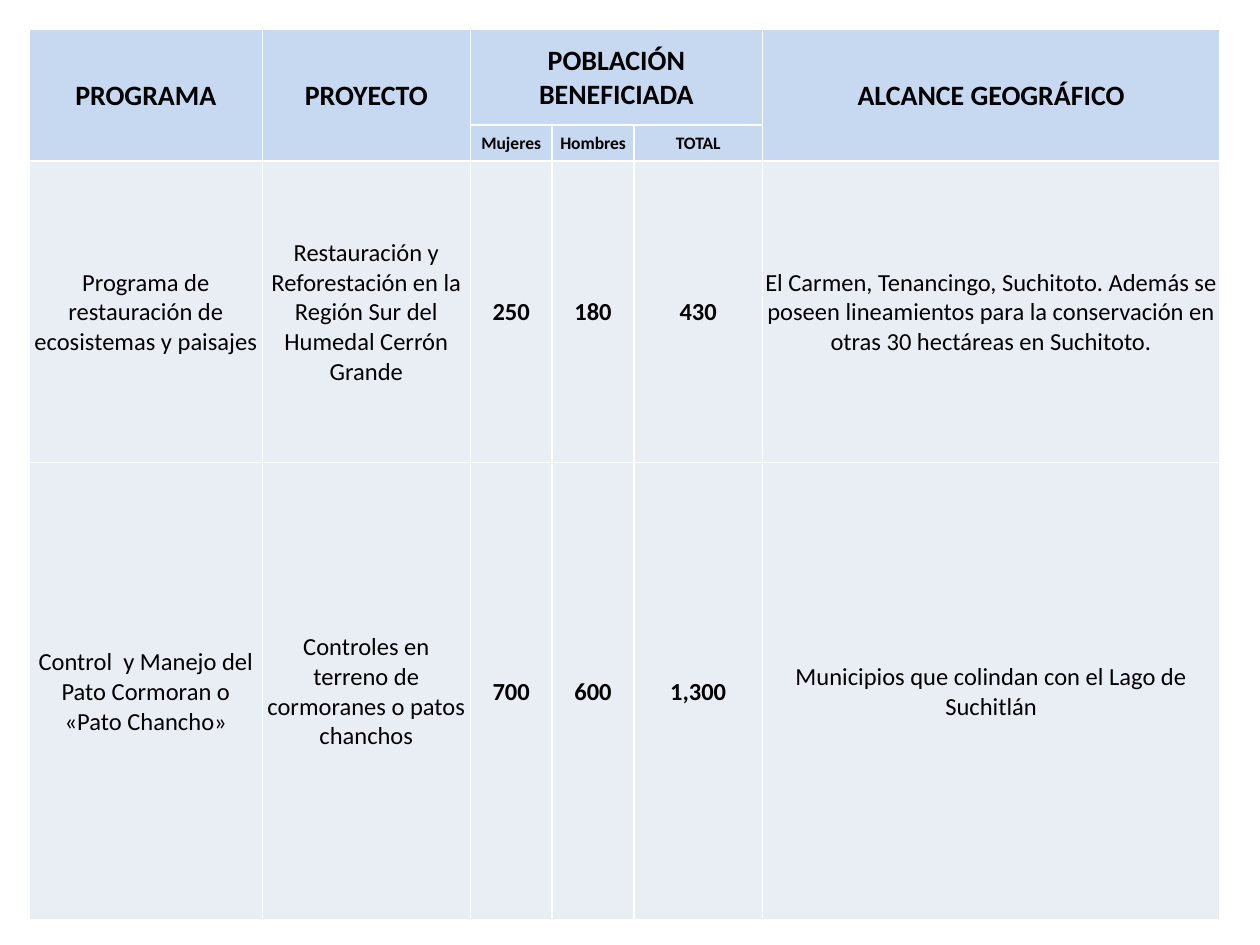
from dataclasses import dataclass
from pptx import Presentation as Deck
from pptx.dml.color import RGBColor as Color
from pptx.enum.text import MSO_ANCHOR as Anchor, PP_ALIGN as Align
from pptx.oxml import parse_xml as to_xml
from pptx.oxml.ns import nsdecls
from pptx.util import Cm, Pt


@dataclass(frozen=True)
class Theme:
    font: str = "Calibri"
    ink: str = "000000"
    head: str = "C6D9F1"
    body: str = "E9EDF4"
    rule: str = "FFFFFF"
    line: int = 12700
    big: int = 16
    small: int = 10
    text: int = 14


def apply(item, form):
    for name, value in form.items():
        setattr(item, name, value)


class Page:
    def __init__(self, deck, theme):
        self.theme = theme
        self.slide = deck.slides.add_slide(deck.slide_layouts[6])

    def border(self, cell):
        props = cell._tc.get_or_add_tcPr()
        for side in "LRTB":
            props.append(to_xml(
                f'<a:ln{side} {nsdecls("a")} w="{self.theme.line}"><a:solidFill>'
                f'<a:srgbClr val="{self.theme.rule}"/></a:solidFill></a:ln{side}>'))

    def cell(self, cell, text, size, bold, fill):
        side = Cm(0.03)
        apply(cell, {"margin_left": side, "margin_right": side, "margin_top": side,
                     "margin_bottom": 0, "vertical_anchor": Anchor.MIDDLE})
        self.border(cell)
        cell.fill.solid()
        cell.fill.fore_color.rgb = Color.from_string(fill)
        para = cell.text_frame.paragraphs[0]
        para.alignment = Align.CENTER
        run = para.add_run()
        run.text = text
        apply(run.font, {"name": self.theme.font, "size": Pt(size), "bold": bold})
        run.font.color.rgb = Color.from_string(self.theme.ink)

    def table(self, left, top, cols, rows, data, spans, counts):
        look = self.theme
        grid = self.slide.shapes.add_table(
            len(rows), len(cols), Cm(left), Cm(top), Cm(sum(cols)), Cm(sum(rows))).table
        for col, width in zip(grid.columns, cols):
            col.width = Cm(width)
        for row, height in zip(grid.rows, rows):
            row.height = Cm(height)
        for r, line in enumerate(data):
            for c, text in enumerate(line):
                head = r < 2
                size = look.text
                if head:
                    size = look.small if r and c in counts else look.big
                self.cell(grid.cell(r, c), text, size, head or c in counts,
                          look.head if head else look.body)
        for start, end in spans:
            grid.cell(*start).merge(grid.cell(*end))


COLS = [4.7, 4.19, 1.65, 1.65, 2.59, 9.22]
ROWS = [1.93, 0.73, 6.07, 9.22]
DATA = [
    ["PROGRAMA", "PROYECTO", "POBLACIÓN BENEFICIADA", "", "", "ALCANCE GEOGRÁFICO"],
    ["", "", "Mujeres", "Hombres", "TOTAL", ""],
    ["Programa de restauración de ecosistemas y paisajes",
     "Restauración y Reforestación en la Región Sur del Humedal Cerrón Grande",
     "250", "180", "430",
     "El Carmen, Tenancingo, Suchitoto. Además se poseen lineamientos para la "
     "conservación en otras 30 hectáreas en Suchitoto."],
    ["Control  y Manejo del Pato Cormoran o «Pato Chancho»",
     "Controles en terreno de cormoranes o patos chanchos",
     "700", "600", "1,300",
     "Municipios que colindan con el Lago de Suchitlán"],
]
SPANS = [((0, c), (1, c)) for c in (0, 1, 5)] + [((0, 2), (0, 4))]


def main():
    deck = Deck()
    apply(deck, {"slide_width": Cm(25.4), "slide_height": Cm(19.05)})
    page = Page(deck, Theme())
    page.table(0.59, 0.59, COLS, ROWS, DATA, SPANS, range(2, 5))
    deck.save("out.pptx")


if __name__ == "__main__":
    main()
